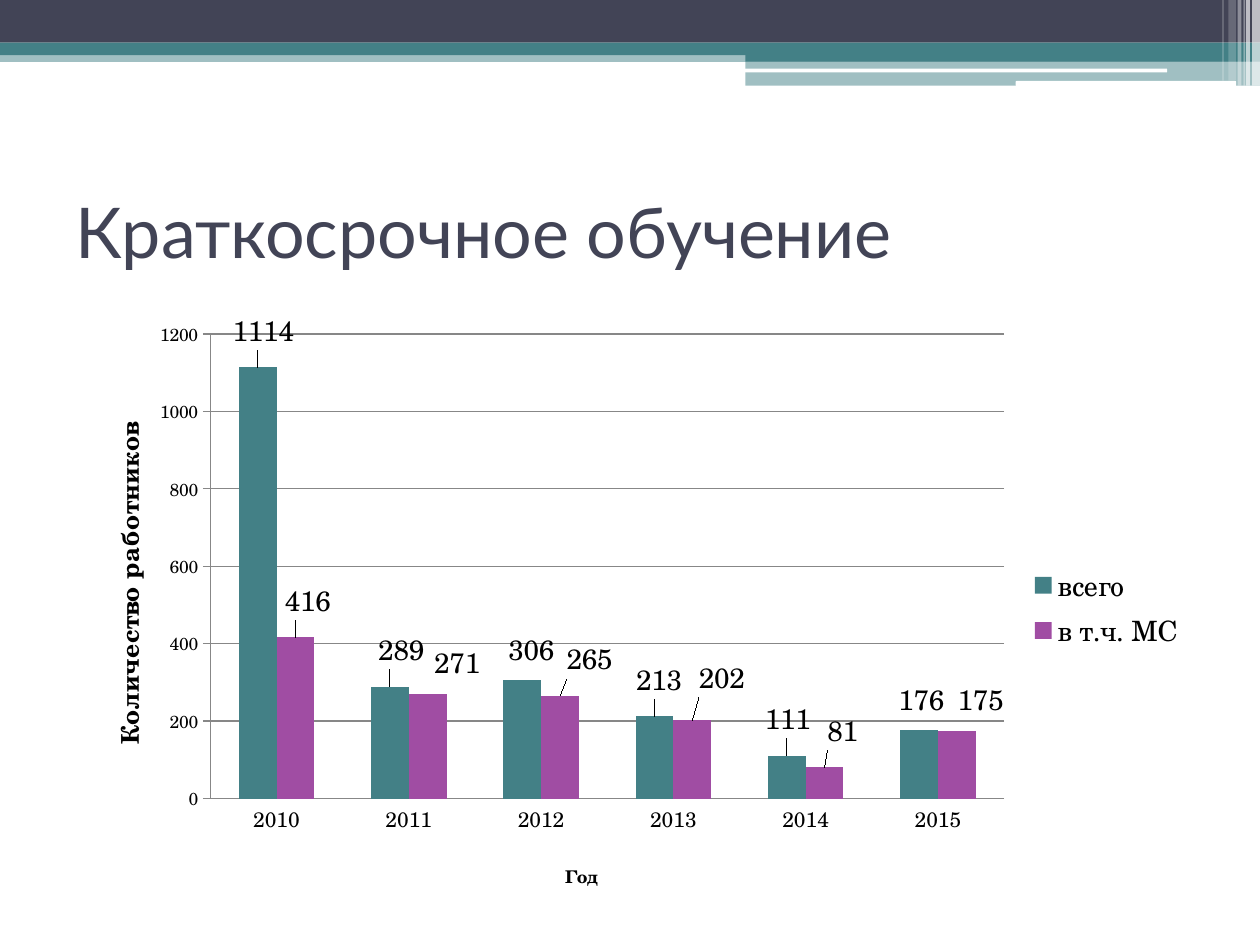
from typing import NamedTuple

from pptx import Presentation
from pptx.chart.data import CategoryChartData
from pptx.dml.color import RGBColor
from pptx.enum.chart import XL_CHART_TYPE, XL_LABEL_POSITION, XL_LEGEND_POSITION, XL_TICK_MARK
from pptx.enum.shapes import MSO_SHAPE
from pptx.enum.text import MSO_ANCHOR, PP_ALIGN
from pptx.oxml.ns import qn
from pptx.oxml.xmlchemy import OxmlElement
from pptx.util import Pt

NAVY, TEAL, PURPLE = "424456", "438086", "A04DA3"
WHITE, BLACK, GRAY = "FFFFFF", "000000", "878787"
TITLE_FONT, CHART_FONT = "Lato", "TeX Gyre Schola"


class Bar(NamedTuple):
    left: float
    top: float
    width: float
    height: float
    color: str
    opacity: int = 100
    rounded: bool = False


class Series(NamedTuple):
    name: str
    values: tuple
    color: str
    label_shifts: tuple  # (x, y) as fractions of the chart


BARS = [
    Bar(0, 28.8, 720, 6.6, TEAL, 50),
    Bar(0, 0, 720, 24.4, NAVY),
    Bar(0, 24.4, 720, 7.2, TEAL),
    Bar(426, 28, 294, 7.2, TEAL),
    Bar(426, 35.2, 294, 13.7, TEAL, 50),
    Bar(425.7, 39.2, 241.2, 2.2, WHITE, rounded=True),
    Bar(580.4, 46.3, 126, 2.9, WHITE, rounded=True),
    Bar(715.5, 0, 4.5, 48.9, WHITE, 65),
    Bar(712, 0, 2.2, 48.9, WHITE, 65),
    Bar(710.6, 0, 0.7, 48.9, WHITE, 60),
    Bar(707.2, 0, 2.2, 48.9, WHITE, 40),
    Bar(702, 0, 4.3, 46.1, WHITE, 20),
    Bar(698.5, 0, 0.7, 46.1, WHITE, 30),
]

YEARS = ("2010", "2011", "2012", "2013", "2014", "2015")
SERIES = [
    Series("всего", (1114, 289, 306, 213, 111, 176), TEAL,
           ((0.005, -0.02), (0.01, -0.02), (0.008, -0.01),
            (0.004, -0.02), (0.001, -0.02), (0.002, -0.01))),
    Series("в т.ч. МС", (416, 271, 265, 202, 81, 175), PURPLE,
           ((0.011, -0.02), (0.026, -0.01), (0.026, -0.02),
            (0.026, -0.03), (0.016, -0.02), (0.021, -0.01))),
]


def rgb(color: str) -> RGBColor:
    return RGBColor.from_string(color)


def paint(fill, color: str) -> None:
    fill.solid()
    fill.fore_color.rgb = rgb(color)


def style(font, size: float, color: str = BLACK, name: str = CHART_FONT, bold: bool = False) -> None:
    font.size, font.name, font.bold = Pt(size), name, bold
    font.color.rgb = rgb(color)


def draw_bar(page, bar: Bar) -> None:
    preset = MSO_SHAPE.ROUNDED_RECTANGLE if bar.rounded else MSO_SHAPE.RECTANGLE
    box = page.shapes.add_shape(preset, Pt(bar.left), Pt(bar.top), Pt(bar.width), Pt(bar.height))
    box.shadow.inherit = False
    box.line.fill.background()
    paint(box.fill, bar.color)
    if bar.opacity < 100:
        alpha = OxmlElement("a:alpha")
        alpha.set("val", str(bar.opacity * 1000))
        box.fill._xPr.find(".//" + qn("a:srgbClr")).append(alpha)


def set_layout(parent, after: str | None, **settings) -> None:
    """Give a chart part a manual layout, placed behind its child named after."""
    for old in parent.findall(qn("c:layout")):
        parent.remove(old)
    layout, manual = OxmlElement("c:layout"), OxmlElement("c:manualLayout")
    layout.append(manual)
    for tag, value in settings.items():
        item = OxmlElement("c:" + tag)
        item.set("val", str(value))
        manual.append(item)
    if after:
        parent.find(qn(after)).addnext(layout)
    else:
        parent.insert(0, layout)


def style_axis(axis, title: str, title_size: float, tick_size: float, x: float, y: float) -> None:
    axis.has_title = True
    frame = axis.axis_title.text_frame
    frame.text = title
    style(frame.paragraphs[0].font, title_size, bold=True)
    set_layout(axis.axis_title._element, "c:tx", xMode="edge", yMode="edge", x=x, y=y)
    style(axis.tick_labels.font, tick_size)
    axis.format.line.color.rgb = rgb(GRAY)
    axis.minor_tick_mark = XL_TICK_MARK.NONE


def style_series(plotted, series: Series) -> None:
    paint(plotted.format.fill, series.color)
    plotted.invert_if_negative = False
    labels = plotted.data_labels
    labels.show_value = True
    style(labels.font, 16)
    for index in range(len(series.values)):
        label = plotted.points[index].data_label
        style(label.font, 16)
        label.position = XL_LABEL_POSITION.OUTSIDE_END
    shapes = plotted._element.findall(".//" + qn("c:dLbl"))
    for element, (x, y) in zip(shapes, series.label_shifts):
        set_layout(element, "c:idx", x=x, y=y)


def draw_chart(page) -> None:
    data = CategoryChartData()
    data.categories = YEARS
    for series in SERIES:
        data.add_series(series.name, series.values)
    chart = page.shapes.add_chart(XL_CHART_TYPE.COLUMN_CLUSTERED,
                                  Pt(36), Pt(177), Pt(648), Pt(340.6), data).chart
    style(chart.font, 10)
    chart.has_title = False
    plot = chart.plots[0]
    plot.gap_width, plot.overlap, plot.vary_by_categories = 150, 0, False
    for plotted, series in zip(plot.series, SERIES):
        style_series(plotted, series)

    style_axis(chart.category_axis, "Год", 10, 12, 0.44, 0.92)
    chart.category_axis.major_tick_mark = XL_TICK_MARK.NONE
    value_axis = chart.value_axis
    style_axis(value_axis, "Количество работников", 14, 10, 0.035, 0.18)
    value_axis.major_tick_mark = XL_TICK_MARK.OUTSIDE
    value_axis.minimum_scale, value_axis.maximum_scale, value_axis.major_unit = 0, 1200, 200
    value_axis.major_gridlines.format.line.color.rgb = rgb(GRAY)

    chart.has_legend = True
    legend = chart.legend
    legend.position = XL_LEGEND_POSITION.RIGHT
    legend.include_in_layout = False
    style(legend.font, 16)
    set_layout(legend._element, "c:legendPos", xMode="edge", yMode="edge",
               x=0.85, y=0.42, w=0.14, h=0.16)
    set_layout(chart._chartSpace.chart.plotArea, None, layoutTarget="inner",
               xMode="edge", yMode="edge", x=0.13, y=0.04, w=0.7, h=0.78)


def write_title(page) -> None:
    title = page.shapes.title
    title.left, title.top, title.width, title.height = Pt(36), Pt(90), Pt(648), Pt(84)
    frame = title.text_frame
    frame.text = "Краткосрочное обучение"
    frame.vertical_anchor = MSO_ANCHOR.MIDDLE
    para = frame.paragraphs[0]
    para.alignment = PP_ALIGN.LEFT
    style(para.font, 40, NAVY, TITLE_FONT)


def main() -> None:
    deck = Presentation()
    deck.slide_width, deck.slide_height = Pt(720), Pt(540)
    page = deck.slides.add_slide(deck.slide_layouts[5])
    for bar in BARS:
        draw_bar(page, bar)
    write_title(page)
    draw_chart(page)
    deck.save("out.pptx")


if __name__ == "__main__":
    main()
